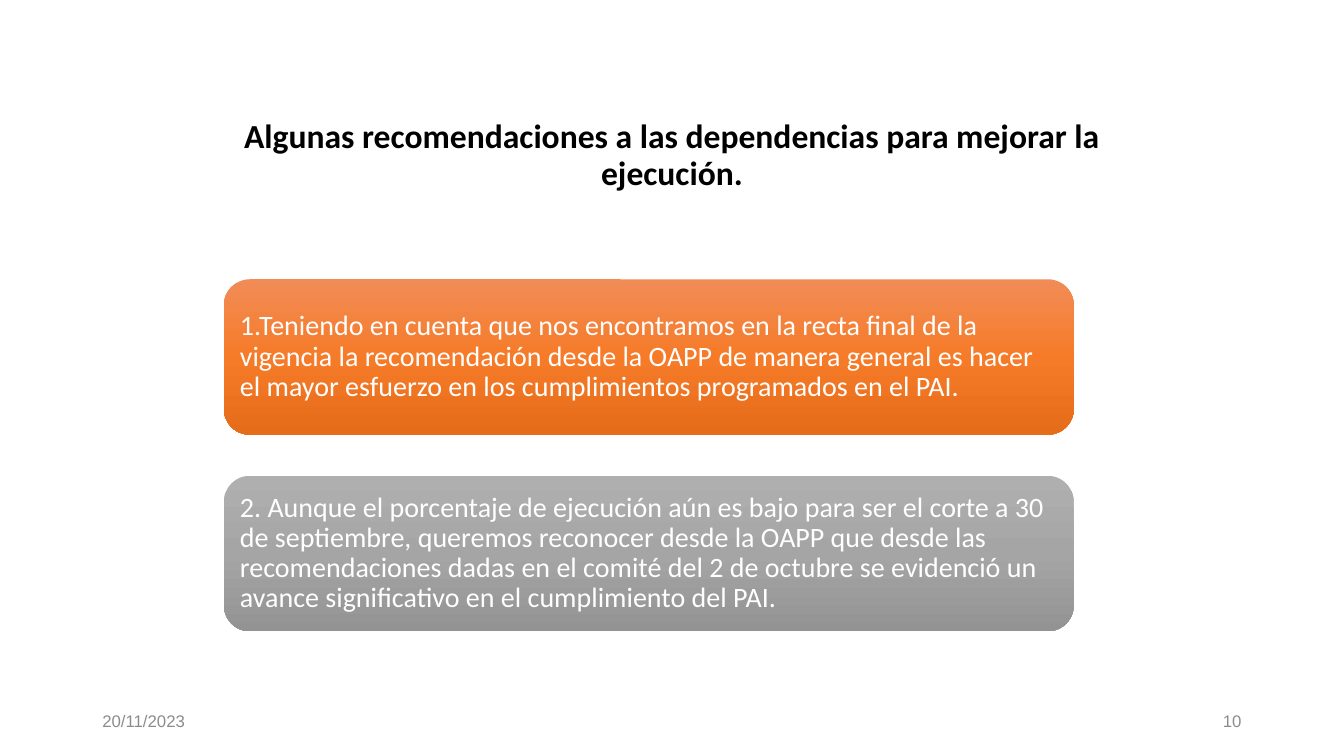
from copy import deepcopy

from pptx import Presentation
from pptx.dml.color import RGBColor
from pptx.enum.shapes import MSO_SHAPE
from pptx.enum.text import MSO_ANCHOR, MSO_AUTO_SIZE, PP_ALIGN
from pptx.oxml.ns import qn
from pptx.util import Pt

ROUNDED = MSO_SHAPE.ROUNDED_RECTANGLE
LEFT, CENTER, RIGHT = PP_ALIGN.LEFT, PP_ALIGN.CENTER, PP_ALIGN.RIGHT
MIDDLE, BOTTOM = MSO_ANCHOR.MIDDLE, MSO_ANCHOR.BOTTOM
NO_FIT = MSO_AUTO_SIZE.NONE
TITLE_ONLY = 5

CARD_TOP, CARD_STEP = 199.5, 140.4
CARDS = [
    ("1.Teniendo en cuenta que nos encontramos en la recta final de la vigencia "
     "la recomendación desde la OAPP de manera general es hacer el mayor esfuerzo "
     "en los cumplimientos programados en el PAI.",
     ("F18C57", "F67B28", "E56C19")),
    ("2. Aunque el porcentaje de ejecución aún es bajo para ser el corte a 30 de "
     "septiembre, queremos reconocer desde la OAPP que desde las recomendaciones "
     "dadas en el comité del 2 de octubre se evidenció un avance significativo en "
     "el cumplimiento del PAI.",
     ("AFAFAF", "A5A5A5", "939393")),
]


def rgb(color):
    return RGBColor.from_string(color)


def set_text(sp, text, size=20, color="FFFFFF", font="Calibri", bold=False,
             align=LEFT, anchor=MIDDLE, spacing=0.9):
    tf = sp.text_frame
    tf.word_wrap = True
    tf.auto_size = NO_FIT
    tf.vertical_anchor = anchor
    p = tf.paragraphs[0]
    p.alignment = align
    p.line_spacing = spacing
    r = p.add_run()
    r.text = text
    r.font.size = Pt(size)
    r.font.name = font
    r.font.bold = bold
    r.font.color.rgb = rgb(color)


def fill_gradient(sp, colors):
    """Spread the colours evenly from top to bottom."""
    sp.fill.gradient()
    sp.fill.gradient_angle = 270
    stop_list = sp._element.spPr.find(".//" + qn("a:gsLst"))
    stop_list.append(deepcopy(stop_list[0]))
    for i, (stop, color) in enumerate(zip(sp.fill.gradient_stops, colors)):
        stop.position = i / (len(colors) - 1)
        stop.color.rgb = rgb(color)


def add_title(slide, text):
    sp = slide.shapes.title
    sp.left, sp.top, sp.width, sp.height = Pt(120), Pt(10.8), Pt(720), Pt(130.3)
    set_text(sp, text, size=24, color="000000", bold=True, align=CENTER, anchor=BOTTOM)


def add_card(slide, top, text, colors):
    sp = slide.shapes.add_shape(ROUNDED, Pt(160), Pt(top), Pt(607), Pt(111))
    sp.shadow.inherit = False
    sp.line.fill.background()
    fill_gradient(sp, colors)
    tf = sp.text_frame
    tf.margin_left = tf.margin_right = tf.margin_top = tf.margin_bottom = Pt(6)
    set_text(sp, text)


def add_footer(slide, left, text, align):
    sp = slide.shapes.add_textbox(Pt(left), Pt(500.5), Pt(216), Pt(28.8))
    set_text(sp, text, size=12, color="8C8C8C", font="Arial", align=align, spacing=1.0)


def main():
    prs = Presentation()
    prs.slide_width, prs.slide_height = Pt(960), Pt(540)
    slide = prs.slides.add_slide(prs.slide_layouts[TITLE_ONLY])

    add_title(slide, "Algunas recomendaciones a las dependencias para mejorar la ejecución.")

    # Recommendation cards
    for i, (text, colors) in enumerate(CARDS):
        add_card(slide, CARD_TOP + i * CARD_STEP, text, colors)

    # Date and slide number
    add_footer(slide, 66, "20/11/2023", LEFT)
    add_footer(slide, 678, "10", RIGHT)

    prs.save("out.pptx")


if __name__ == "__main__":
    main()
